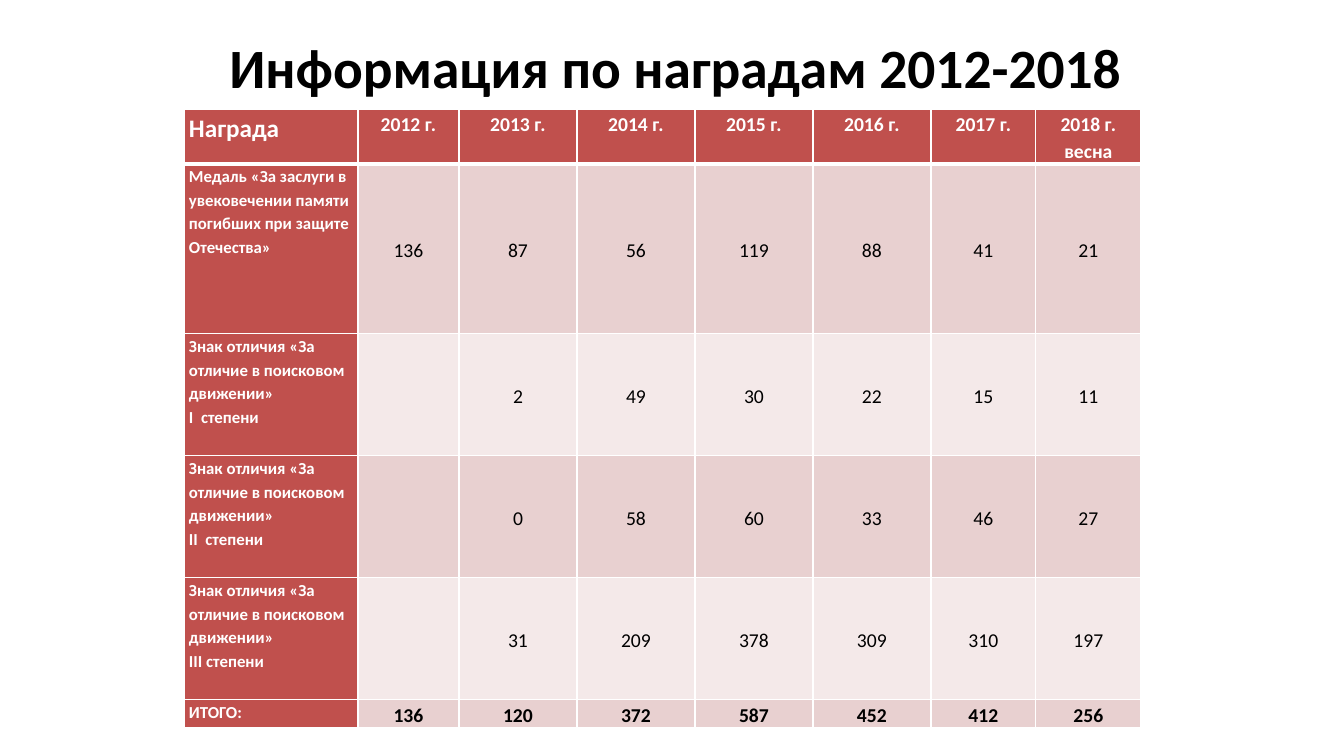
import copy

import pptx
import pptx.dml.color
import pptx.enum.text
import pptx.oxml
import pptx.oxml.ns
import pptx.util

# Content
TITLE = "Информация по наградам 2012-2018"
BADGE = "Знак отличия «За отличие в поисковом движении» \v"
HEADER = ["Награда", "2012 г.", "2013 г.", "2014 г.", "2015 г.", "2016 г.", "2017 г.", "2018 г.\vвесна"]
AWARDS = [
    ["Медаль «За заслуги в увековечении памяти погибших при защите Отечества»",
     136, 87, 56, 119, 88, 41, 21],
    [BADGE + "I  степени", "", 2, 49, 30, 22, 15, 11],
    [BADGE + "II  степени", "", 0, 58, 60, 33, 46, 27],
    [BADGE + "III степени", "", 31, 209, 378, 309, 310, 197],
    ["ИТОГО:", 136, 120, 372, 587, 452, 412, 256],
]
ROWS = [HEADER] + AWARDS
TOTAL = len(ROWS) - 1

# Layout in px, colours and font
SCALE = 914400 / 100.8
PAGE_SIZE = (1344, 756)
TITLE_BOX = (121, 31, 1109, 71)
TABLE_AT = (184, 109)
COLUMN_WIDTHS = [174, 101, 118, 118, 118, 118, 105, 105]
ROW_HEIGHTS = [48, 170, 122, 122, 122, 26]
FONT = "Calibri"
RED, DARK_BAND, LIGHT_BAND = "C0504D", "E8D0D0", "F4E9E9"
WHITE, BLACK = "FFFFFF", "000000"
CENTER = pptx.enum.text.PP_ALIGN.CENTER
LEFT = pptx.enum.text.PP_ALIGN.LEFT
TOP = pptx.enum.text.MSO_ANCHOR.TOP
MIDDLE = pptx.enum.text.MSO_ANCHOR.MIDDLE


def px(length):
    return pptx.util.Emu(round(length * SCALE))


def color(value):
    return pptx.dml.color.RGBColor.from_string(value)


def write(frame, text, size, ink, bold, align):
    frame.text = text
    para = frame.paragraphs[0]
    para.alignment = align
    for span in para.runs:
        span.font.name = FONT
        span.font.size = pptx.util.Pt(size)
        span.font.bold = bold
        span.font.color.rgb = color(ink)
    # Line breaks take the size of the text around them
    for line_break in para._p.findall(pptx.oxml.ns.qn("a:br")):
        line_break.append(copy.deepcopy(para.runs[0]._r.rPr))
    return para


def add_borders(cell, widths):
    properties = cell._tc.get_or_add_tcPr()
    for side, width in widths.items():
        properties.append(pptx.oxml.parse_xml(
            f'<a:ln{side} {pptx.oxml.ns.nsdecls("a")} w="{pptx.util.Pt(width)}">'
            f'<a:solidFill><a:srgbClr val="{WHITE}"/></a:solidFill></a:ln{side}>'))


def fill_cell(cell, row, column, value):
    is_label = column == 0
    is_red = row == 0 or is_label
    # Borders: a thick line under the header
    add_borders(cell, {"L": 1, "R": 1, "T": 3 if row == 1 else 1, "B": 3 if row == 0 else 1})
    cell.fill.solid()
    cell.fill.fore_color.rgb = color(RED if is_red else DARK_BAND if row % 2 else LIGHT_BAND)
    cell.margin_left = cell.margin_right = px(5)
    cell.margin_top = cell.margin_bottom = 0
    cell.vertical_anchor = TOP if is_red else MIDDLE
    if value == "":
        return
    size = 14 if not is_label else 18 if row == 0 else 12
    para = write(cell.text_frame, str(value), size, WHITE if is_red else BLACK,
                 is_red or row == TOTAL, LEFT if is_label else CENTER)
    para.line_spacing = 1.15


def main():
    deck = pptx.Presentation()
    deck.slide_width, deck.slide_height = map(px, PAGE_SIZE)
    page = deck.slides.add_slide(deck.slide_layouts[6])

    # Table of awards
    size = (sum(COLUMN_WIDTHS), sum(ROW_HEIGHTS))
    table = page.shapes.add_table(len(ROWS), len(HEADER), *map(px, TABLE_AT + size)).table
    for column, width in zip(table.columns, COLUMN_WIDTHS):
        column.width = px(width)
    for row, height in zip(table.rows, ROW_HEIGHTS):
        row.height = px(height)
    for row, values in enumerate(ROWS):
        for column, value in enumerate(values):
            fill_cell(table.cell(row, column), row, column, value)

    # Title
    box = page.shapes.add_textbox(*map(px, TITLE_BOX))
    box.text_frame.word_wrap = True
    box.text_frame.vertical_anchor = MIDDLE
    write(box.text_frame, TITLE, 39.6, BLACK, True, CENTER)

    deck.save("out.pptx")


if __name__ == "__main__":
    main()
